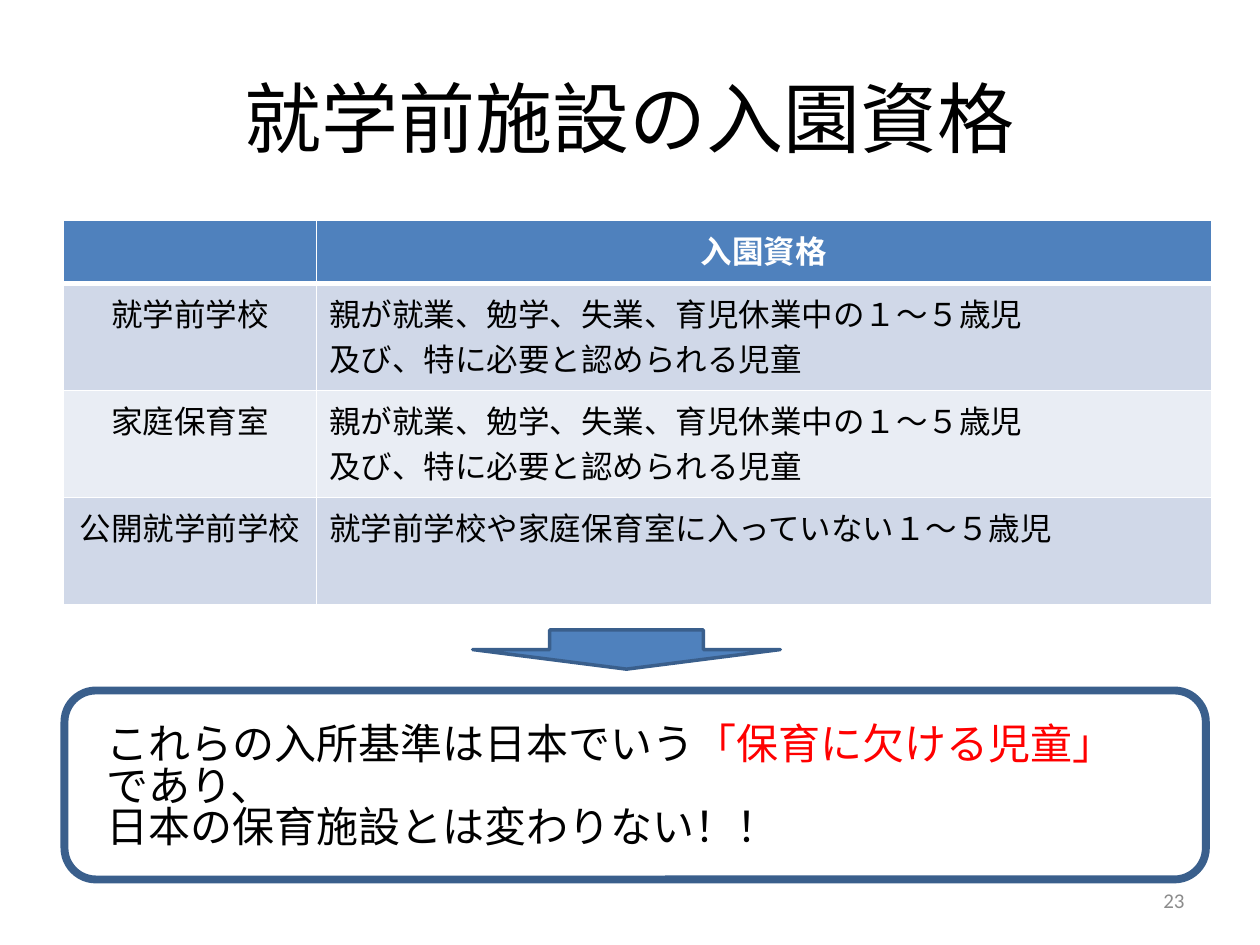
from dataclasses import dataclass

from lxml.etree import SubElement
from pptx import Presentation
from pptx.dml.color import RGBColor
from pptx.enum.shapes import MSO_SHAPE as Shape
from pptx.enum.text import MSO_ANCHOR as Anchor, PP_ALIGN as Align
from pptx.oxml.ns import qn
from pptx.util import Cm, Pt


@dataclass(frozen=True)
class Theme:
    font: str = "Calibri"
    blue: str = "4F81BD"
    outline: str = "3A5F8C"
    bands: tuple = ("D0D8E8", "E9EDF4")
    white: str = "FFFFFF"
    black: str = "000000"
    red: str = "FF0000"
    grey: str = "8C8C8C"
    title_size: int = 44
    note_size: int = 24
    table_size: int = 18
    number_size: int = 12


THEME = Theme()
BLANK_LAYOUT = 6

COLUMN_WIDTHS = (5.1, 18.04)
ROW_HEIGHTS = (1.26, 2.16, 2.16, 2.16)
PARENTS = "親が就業、勉学、失業、育児休業中の１～５歳児\n及び、特に必要と認められる児童"
ROWS = (
    ("", "入園資格"),
    ("就学前学校", PARENTS),
    ("家庭保育室", PARENTS),
    ("公開就学前学校", "就学前学校や家庭保育室に入っていない１～５歳児"),
)


def rgb(color):
    return RGBColor.from_string(color)


def style_span(span, size, color, bold=False):
    span.font.name = THEME.font
    span.font.size = Pt(size)
    span.font.bold = bold
    span.font.color.rgb = rgb(color)


def style_frame(frame, size, color, align=Align.LEFT, bold=False):
    for para in frame.paragraphs:
        para.alignment = align
        for span in para.runs:
            style_span(span, size, color, bold)


def add_text(page, text, area, size, color, align=Align.LEFT, anchor=Anchor.TOP):
    box = page.shapes.add_textbox(*map(Cm, area))
    frame = box.text_frame
    frame.word_wrap = True
    frame.vertical_anchor = anchor
    frame.text = text
    style_frame(frame, size, color, align)
    return frame


def add_outlined_shape(page, kind, area, line_width, fill=None):
    shape = page.shapes.add_shape(kind, *map(Cm, area))
    shape.shadow.inherit = False
    if fill:
        shape.fill.solid()
        shape.fill.fore_color.rgb = rgb(fill)
    else:
        shape.fill.background()
    shape.line.color.rgb = rgb(THEME.outline)
    shape.line.width = Pt(line_width)


def set_borders(cell, bottom_width):
    """Draw white borders; they must come before the cell's fill."""
    properties = cell._tc.get_or_add_tcPr()
    for side, width in (("L", 1), ("R", 1), ("T", 1), ("B", bottom_width)):
        border = SubElement(properties, qn(f"a:ln{side}"), w=str(Pt(width)))
        fill = SubElement(border, qn("a:solidFill"))
        SubElement(fill, qn("a:srgbClr"), val=THEME.white)


def add_eligibility_table(page, left, top):
    table = page.shapes.add_table(
        len(ROWS), len(COLUMN_WIDTHS), Cm(left), Cm(top),
        Cm(sum(COLUMN_WIDTHS)), Cm(sum(ROW_HEIGHTS)),
    ).table
    for column, width in zip(table.columns, COLUMN_WIDTHS):
        column.width = Cm(width)
    for r, (texts, height) in enumerate(zip(ROWS, ROW_HEIGHTS)):
        table.rows[r].height = Cm(height)
        header = r == 0
        fill = THEME.blue if header else THEME.bands[(r - 1) % 2]
        color = THEME.white if header else THEME.black
        for c, text in enumerate(texts):
            cell = table.cell(r, c)
            cell.text_frame.text = text
            align = Align.CENTER if header or c == 0 else Align.LEFT
            style_frame(cell.text_frame, THEME.table_size, color, align, header)
            set_borders(cell, 3 if header else 1)
            cell.fill.solid()
            cell.fill.fore_color.rgb = rgb(fill)


def add_conclusion(page):
    add_outlined_shape(page, Shape.ROUNDED_RECTANGLE, (1.3, 13.92, 23.01, 3.81), 4.5)
    frame = add_text(page, "これらの入所基準は日本でいう\n日本の保育施設とは変わりない！！",
                     (1.9, 14.53, 21.59, 2.31), THEME.note_size, THEME.black)
    for text, color in (("「保育に欠ける児童」", THEME.red), ("であり、", THEME.black)):
        span = frame.paragraphs[0].add_run()
        span.text = text
        style_span(span, THEME.note_size, color)
    for para in frame.paragraphs:
        para.line_spacing = 0.82


def main():
    deck = Presentation()
    deck.slide_width, deck.slide_height = Cm(25.4), Cm(19.05)
    page = deck.slides.add_slide(deck.slide_layouts[BLANK_LAYOUT])

    # Title
    add_text(page, "就学前施設の入園資格", (1.27, 0.76, 22.86, 3.18),
             THEME.title_size, THEME.black, Align.CENTER, Anchor.MIDDLE)

    # Admission rules, leading down to the conclusion
    add_eligibility_table(page, 1.28, 4.45)
    add_outlined_shape(page, Shape.DOWN_ARROW, (9.53, 12.7, 6.2, 0.79), 2, THEME.blue)
    add_conclusion(page)

    # Page number
    add_text(page, "23", (18.21, 17.65, 5.92, 1.01),
             THEME.number_size, THEME.grey, Align.RIGHT, Anchor.MIDDLE)

    deck.save("out.pptx")


if __name__ == "__main__":
    main()
